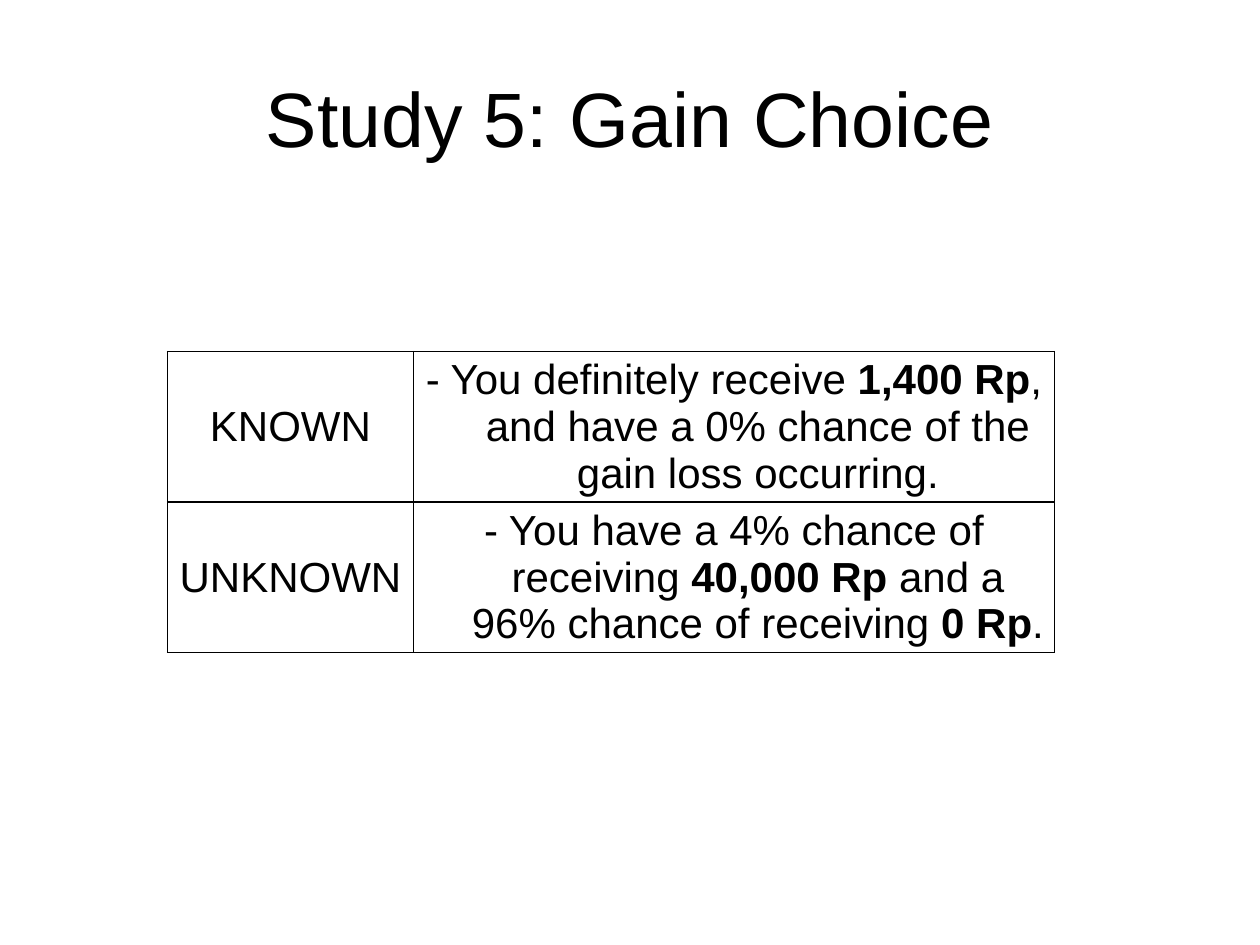
from dataclasses import dataclass

from lxml import etree
from pptx import Presentation
from pptx import util as u
from pptx.dml.color import RGBColor
from pptx.enum import text
from pptx.oxml import ns


@dataclass(frozen=True)
class Theme:
    font: str = "Arial"
    ink: RGBColor = RGBColor(0, 0, 0)
    title_size: u.Pt = u.Pt(44)
    cell_size: u.Pt = u.Pt(24)
    border: u.Pt = u.Pt(1)


THEME = Theme()

# Each cell is a list of (words, bold) runs.
CHOICES = [
    ([("KNOWN", False)],
     [("- You definitely receive ", False), ("1,400 Rp", True),
      (", and have a 0% chance of the gain loss occurring.", False)]),
    ([("UNKNOWN", False)],
     [("- You have a 4% chance of receiving ", False), ("40,000 Rp", True),
      (" and a 96% chance of receiving ", False), ("0 Rp", True), (".", False)]),
]


def style_paragraph(paragraph, size):
    paragraph.alignment = text.PP_ALIGN.CENTER
    paragraph.font.name = THEME.font
    paragraph.font.size = size
    paragraph.font.color.rgb = THEME.ink


def place_title(slide, words, left, top, width, height):
    title = slide.shapes.title
    title.left, title.top, title.width, title.height = left, top, width, height
    title.text_frame.text = words
    title.text_frame.vertical_anchor = text.MSO_ANCHOR.MIDDLE
    style_paragraph(title.text_frame.paragraphs[0], THEME.title_size)


def draw_borders(cell):
    properties = cell._tc.get_or_add_tcPr()
    for side in ("lnL", "lnR", "lnT", "lnB"):
        line = etree.SubElement(properties, ns.qn(f"a:{side}"), w=str(THEME.border))
        fill = etree.SubElement(line, ns.qn("a:solidFill"))
        etree.SubElement(fill, ns.qn("a:srgbClr"), val=str(THEME.ink))


def fill_cell(cell, runs):
    draw_borders(cell)
    cell.fill.background()
    cell.vertical_anchor = text.MSO_ANCHOR.MIDDLE
    cell.margin_left = cell.margin_right = u.Inches(0.07)
    cell.margin_top = cell.margin_bottom = u.Inches(0.04)
    paragraph = cell.text_frame.paragraphs[0]
    style_paragraph(paragraph, THEME.cell_size)
    hanging = u.Inches(0.38)
    indents = paragraph._p.get_or_add_pPr()
    indents.set("marL", str(hanging))
    indents.set("indent", str(-hanging))
    for words, bold in runs:
        run = paragraph.add_run()
        run.text = words
        run.font.bold = bold


def place_choices(slide, choices, left, top, width, height):
    """Draw one row per choice: a narrow label and its description."""
    table = slide.shapes.add_table(len(choices), 2, left, top, width, height).table
    table.first_row = table.horz_banding = False
    label_width = u.Inches(1.95)
    table.columns[0].width = label_width
    table.columns[1].width = width - label_width
    for row, choice in zip(table.rows, choices):
        for cell, runs in zip(row.cells, choice):
            fill_cell(cell, runs)


def main():
    deck = Presentation()
    deck.slide_width, deck.slide_height = u.Inches(10), u.Inches(7.5)
    slide = deck.slides.add_slide(deck.slide_layouts[5])
    place_title(slide, "Study 5: Gain Choice",
                u.Inches(0.5), u.Inches(0.3), u.Inches(9), u.Inches(1.25))
    place_choices(slide, CHOICES,
                  u.Inches(1.33), u.Inches(2.79), u.Inches(7.04), u.Inches(2.38))
    deck.save("out.pptx")


if __name__ == "__main__":
    main()
